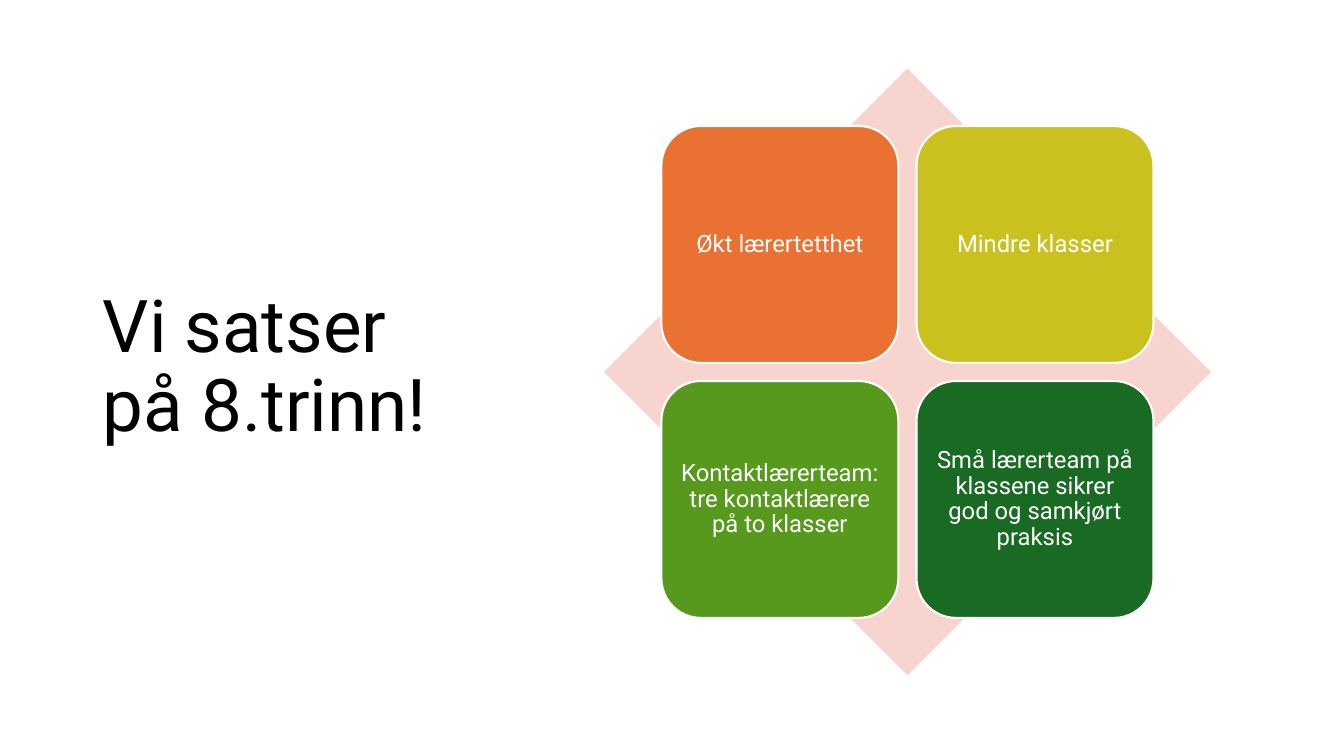
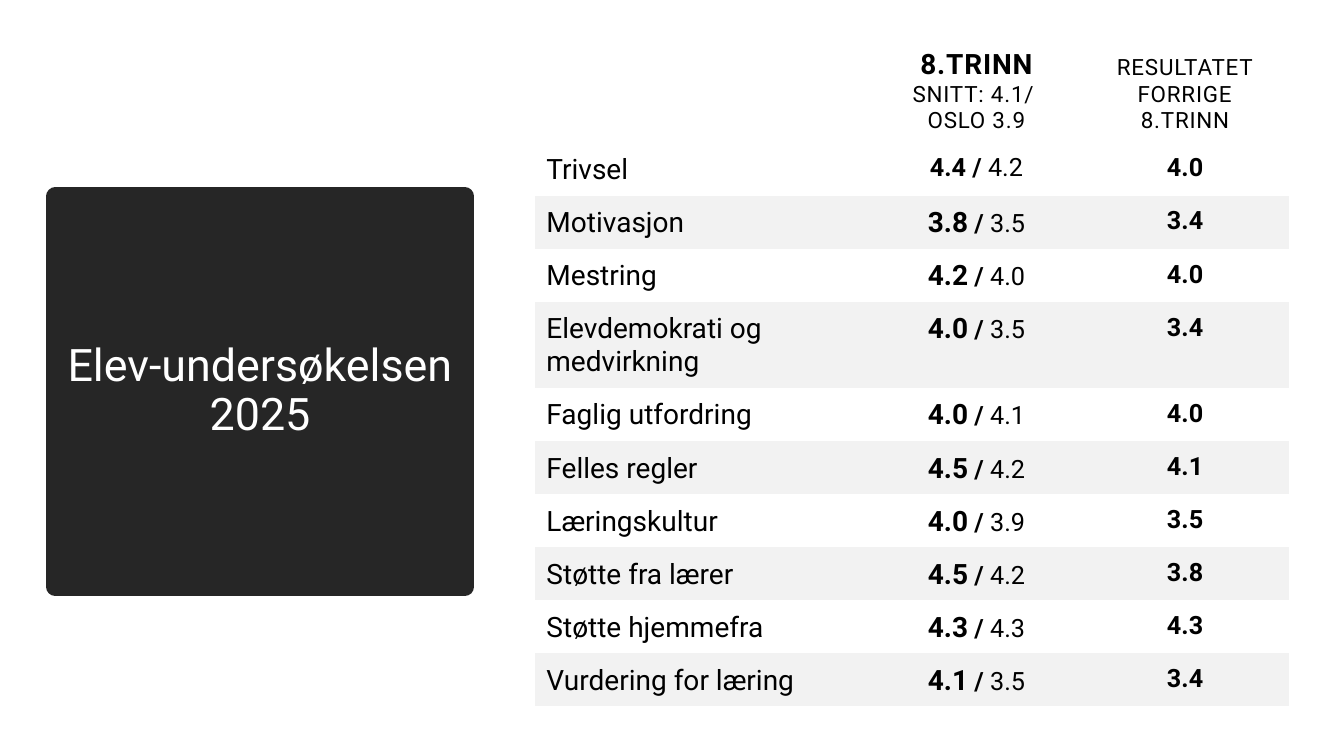
from dataclasses import dataclass

from lxml.etree import SubElement
from pptx import Presentation
from pptx.dml.color import RGBColor
from pptx.enum.shapes import MSO_SHAPE
from pptx.enum.text import MSO_ANCHOR, MSO_AUTO_SIZE, PP_ALIGN
from pptx.oxml.ns import qn
from pptx.slide import Slide
from pptx.table import _Cell as Cell
from pptx.text.text import TextFrame
from pptx.util import Inches, Pt


@dataclass(frozen=True)
class Theme:
    font: str = "Roboto"
    black: str = "000000"
    white: str = "FFFFFF"
    dark: str = "262626"
    band: str = "F2F2F2"
    pink: str = "F7D5CE"
    head: int = 52
    badge: int = 32
    label: int = 20
    score: int = 18
    tile: int = 17
    note: int = 16


@dataclass(frozen=True)
class Run:
    text: str
    size: int
    bold: bool = False


@dataclass(frozen=True)
class Tile:
    text: str
    fill: str


@dataclass(frozen=True)
class Score:
    topic: str
    now: str
    city: str
    past: str
    size: int = 20
    height: float = 0.52


THEME = Theme()

TILES = [
    Tile("Økt lærertetthet", "E97132"),
    Tile("Mindre klasser", "CBC11E"),
    Tile("Kontaktlærerteam: tre kontaktlærere på to klasser", "56991D"),
    Tile("Små lærerteam på klassene sikrer god og samkjørt praksis", "196B24"),
]

SCORES = [
    Score("Trivsel", "4.4", "4.2", "4.0", size=18),
    Score("Motivasjon", "3.8", "3.5", "3.4"),
    Score("Mestring", "4.2", "4.0", "4.0"),
    Score("Elevdemokrati og medvirkning", "4.0", "3.5", "3.4", height=0.85),
    Score("Faglig utfordring", "4.0", "4.1", "4.0"),
    Score("Felles regler", "4.5", "4.2", "4.1"),
    Score("Læringskultur", "4.0", "3.9", "3.5"),
    Score("Støtte fra lærer", "4.5", "4.2", "3.8"),
    Score("Støtte hjemmefra", "4.3", "4.3", "4.3"),
    Score("Vurdering for læring", "4.1", "3.5", "3.4"),
]


def paint(fill, color: str) -> None:
    fill.solid()
    fill.fore_color.rgb = RGBColor.from_string(color)


def write(frame: TextFrame, *lines: list[Run], color: str = THEME.black,
          align: PP_ALIGN = PP_ALIGN.CENTER, leading: float = 1.0,
          spread: int = 0) -> None:
    """Write one paragraph per line; spread is letter spacing in 1/100 pt."""
    frame.word_wrap = True
    for index, line in enumerate(lines):
        para = frame.add_paragraph() if index else frame.paragraphs[0]
        para.alignment = align
        para.line_spacing = leading
        for part in line:
            run = para.add_run()
            run.text = part.text
            run.font.name = THEME.font
            run.font.size = Pt(part.size)
            run.font.bold = part.bold
            run.font.color.rgb = RGBColor.from_string(color)
            if spread:
                run._r.get_or_add_rPr().set("spc", str(spread))


def add_slide(deck, title: str, box: tuple[float, ...], size: int, **style):
    """Add a title-only slide with its title in the given box."""
    slide = deck.slides.add_slide(deck.slide_layouts[5])
    head = slide.shapes.title
    head.left, head.top, head.width, head.height = map(Inches, box)
    frame = head.text_frame
    frame.auto_size = MSO_AUTO_SIZE.NONE
    frame.vertical_anchor = MSO_ANCHOR.MIDDLE
    write(frame, [Run(title, size)], leading=0.9, **style)
    return slide


def add_shape(slide: Slide, kind: MSO_SHAPE, left: float, top: float,
              side: float, fill: str):
    shape = slide.shapes.add_shape(
        kind, Inches(left), Inches(top), Inches(side), Inches(side))
    shape.shadow.inherit = False
    paint(shape.fill, fill)
    shape.line.fill.background()
    return shape


def add_tiles(slide: Slide) -> None:
    left, top, side, step = 6.56, 1.25, 2.35, 2.53
    add_shape(slide, MSO_SHAPE.DIAMOND, 5.99, 0.68, 6.02, THEME.pink)
    for index, tile in enumerate(TILES):
        row, col = divmod(index, 2)
        shape = add_shape(slide, MSO_SHAPE.ROUNDED_RECTANGLE,
                          left + col * step, top + row * step, side, tile.fill)
        paint(shape.line.fill, THEME.white)
        shape.line.width = Pt(1.5)
        frame = shape.text_frame
        frame.margin_left = frame.margin_right = Inches(0.07)
        frame.margin_top = frame.margin_bottom = Inches(0.07)
        frame.vertical_anchor = MSO_ANCHOR.MIDDLE
        write(frame, [Run(tile.text, THEME.tile)],
              color=THEME.white, leading=0.9)


def style_cell(cell: Cell, top: float, band: bool) -> None:
    """Set margins and fill, and clear the borders."""
    cell.margin_left = cell.margin_right = Inches(0.11)
    cell.margin_top, cell.margin_bottom = Inches(top), Inches(0.09)
    props = cell._tc.get_or_add_tcPr()
    for side in ("L", "R", "T", "B"):
        SubElement(SubElement(props, qn(f"a:ln{side}"), w="0"),
                   qn("a:noFill"))
    if band:
        paint(cell.fill, THEME.band)
    else:
        cell.fill.background()


def add_scores(slide: Slide) -> None:
    table = slide.shapes.add_table(
        len(SCORES) + 1, 3, Inches(5.31), Inches(0.39),
        Inches(7.48), Inches(6.62)).table
    table.first_row = table.horz_banding = False
    for col, width in zip(table.columns, (3.34, 2.07, 2.07)):
        col.width = Inches(width)

    table.rows[0].height = Inches(1.02)
    heads = [
        [],
        [[Run("8.TRINN", THEME.label, True)],
         [Run("SNITT: 4.1/ ", THEME.note)],
         [Run("OSLO 3.9", THEME.note)]],
        [[Run("RESULTATET FORRIGE 8.TRINN", THEME.note)]],
    ]
    for cell, lines in zip(table.rows[0].cells, heads):
        style_cell(cell, 0.09, False)
        cell.vertical_anchor = MSO_ANCHOR.BOTTOM
        write(cell.text_frame, *lines, spread=60)

    for index, score in enumerate(SCORES, 1):
        row = table.rows[index]
        row.height = Inches(score.height)
        texts = [
            [Run(score.topic, THEME.label)],
            [Run(score.now, score.size, True), Run(" / ", THEME.score, True),
             Run(score.city, THEME.score)],
            [Run(score.past, THEME.score, True)],
        ]
        for col, (cell, line) in enumerate(zip(row.cells, texts)):
            style_cell(cell, 0.11, index % 2 == 0)
            write(cell.text_frame, line,
                  align=PP_ALIGN.CENTER if col else PP_ALIGN.LEFT)


def main() -> None:
    deck = Presentation()
    deck.slide_width, deck.slide_height = Inches(13.33), Inches(7.5)

    focus = add_slide(deck, "Vi satser på 8.trinn!", (0.92, 0.61, 3.69, 6.09),
                      THEME.head, align=PP_ALIGN.LEFT)
    add_tiles(focus)

    survey = add_slide(deck, "Elev-undersøkelsen 2025",
                       (0.55, 1.95, 4.06, 3.87), THEME.badge,
                       color=THEME.white)
    badge = survey.shapes.title
    badge.text_frame.margin_left = badge.text_frame.margin_right = Inches(0.05)
    paint(badge.fill, THEME.dark)
    paint(badge.line.fill, THEME.dark)
    badge.line.width = Pt(13.75)
    add_scores(survey)

    deck.save("out.pptx")


if __name__ == "__main__":
    main()
